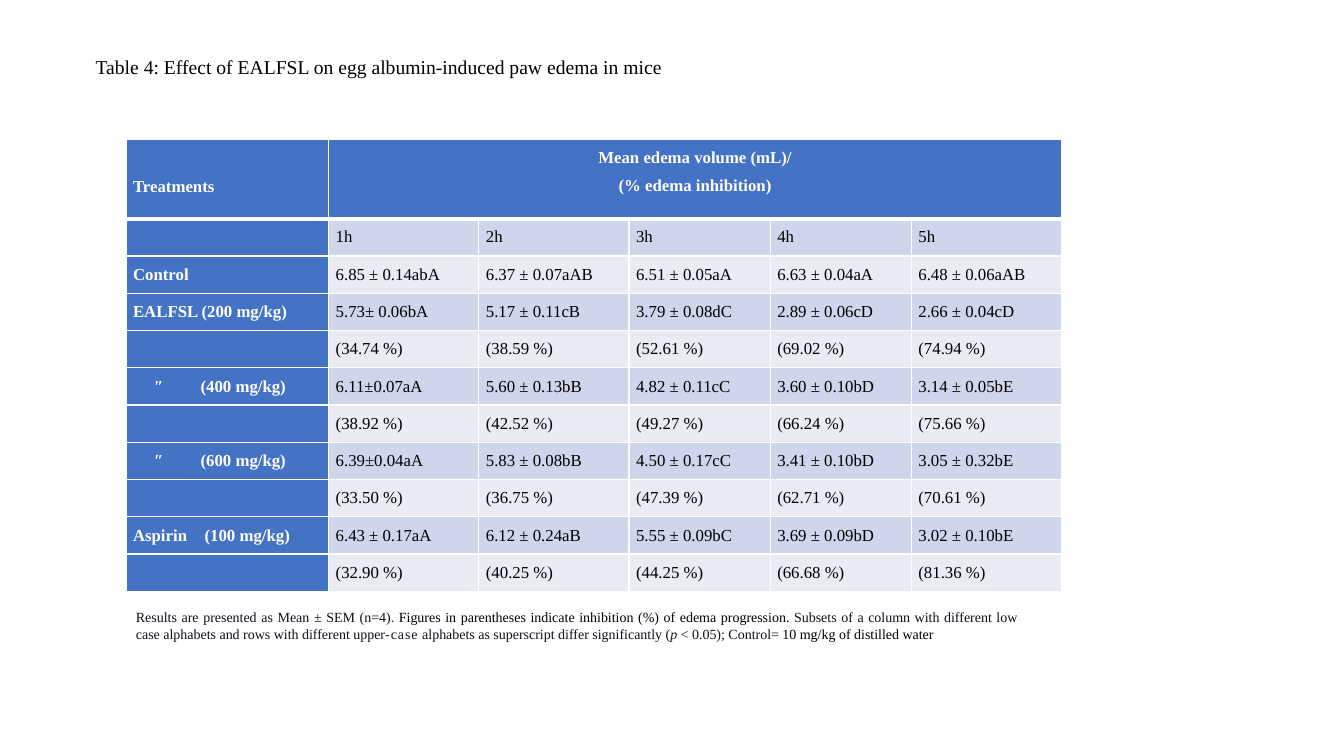
from dataclasses import dataclass

from lxml.etree import SubElement
from pptx import Presentation
from pptx.dml.color import RGBColor
from pptx.enum.text import MSO_ANCHOR, PP_ALIGN
from pptx.oxml.ns import qn
from pptx.util import Inches, Pt


@dataclass(frozen=True)
class Theme:
    font: str = "Times New Roman"
    title_size: int = 14
    table_size: int = 12
    note_size: int = 10
    black: str = "000000"
    ink: str = "0E101A"
    white: str = "FFFFFF"
    header: str = "4472C4"
    bands: tuple = ("CFD5EA", "E9EBF5")
    rule: int = 1
    heavy_rule: int = 3


THEME = Theme()
TITLE = "Table 4: Effect of EALFSL on egg albumin-induced paw edema in mice"
HEADING = ("Mean edema volume (mL)/", "(% edema inhibition)")
ROWS = [
    ("", "1h", "2h", "3h", "4h", "5h"),
    ("Control", "6.85 ± 0.14abA", "6.37 ± 0.07aAB", "6.51 ± 0.05aA", "6.63 ± 0.04aA", "6.48 ± 0.06aAB"),
    ("EALFSL (200 mg/kg)", "5.73± 0.06bA", "5.17 ± 0.11cB", "3.79 ± 0.08dC", "2.89 ± 0.06cD", "2.66 ± 0.04cD"),
    ("", "(34.74 %)", "(38.59 %)", "(52.61 %)", "(69.02 %)", "(74.94 %)"),
    ("\tʺ\t(400 mg/kg)", "6.11±0.07aA", "5.60 ± 0.13bB", "4.82 ± 0.11cC", "3.60 ± 0.10bD", "3.14 ± 0.05bE"),
    ("", "(38.92 %)", "(42.52 %)", "(49.27 %)", "(66.24 %)", "(75.66 %)"),
    ("\tʺ\t(600 mg/kg)", "6.39±0.04aA", "5.83 ± 0.08bB", "4.50 ± 0.17cC", "3.41 ± 0.10bD", "3.05 ± 0.32bE"),
    ("", "(33.50 %)", "(36.75 %)", "(47.39 %)", "(62.71 %)", "(70.61 %)"),
    ("Aspirin\t(100 mg/kg)", "6.43 ± 0.17aA", "6.12 ± 0.24aB", "5.55 ± 0.09bC", "3.69 ± 0.09bD", "3.02 ± 0.10bE"),
    ("", "(32.90 %)", "(40.25 %)", "(44.25 %)", "(66.68 %)", "(81.36 %)"),
]
NOTE = [
    ("Results are presented as Mean ± SEM (n=4). ", THEME.ink, {}),
    ("Figures in parentheses indicate inhibition (%) of edema progression. ", THEME.black, {}),
    ("Subsets of a column with different low case alphabets and rows with different upper", THEME.ink, {}),
    ("-case", THEME.ink, {"spacing": 70}),
    (" alphabets as superscript differ significantly (", THEME.ink, {}),
    ("p ", THEME.ink, {"italic": True}),
    ("< 0.05); Control= ", THEME.ink, {}),
    ("10 mg/kg of distilled water", THEME.black, {}),
]


def set_attributes(target, values):
    for name, value in values.items():
        setattr(target, name, value)


def add_run(paragraph, text, size, color, bold=False, italic=False, spacing=0):
    run = paragraph.add_run()
    run.text = text
    set_attributes(run.font, {"name": THEME.font, "size": Pt(size), "bold": bold, "italic": italic})
    run.font.color.rgb = RGBColor.from_string(color)
    if spacing:
        run.font._element.set("spc", str(spacing))


def add_text_box(slide, box, right_margin=0.1):
    frame = slide.shapes.add_textbox(*map(Inches, box)).text_frame
    set_attributes(frame, {"word_wrap": True, "margin_right": Inches(right_margin)})
    return frame.paragraphs[0]


def add_title(slide, box):
    add_run(add_text_box(slide, box), TITLE, THEME.title_size, THEME.black)


def add_note(slide, box):
    paragraph = add_text_box(slide, box, right_margin=0.31)
    paragraph.alignment = PP_ALIGN.JUSTIFY
    for text, color, values in NOTE:
        add_run(paragraph, text, THEME.note_size, color, **values)


def add_tab_stops(paragraph, positions):
    tab_list = SubElement(paragraph._p.get_or_add_pPr(), qn("a:tabLst"))
    for position in positions:
        SubElement(tab_list, qn("a:tab"), pos=str(Inches(position)), algn="l")


def set_borders(cell, bottom):
    properties = cell._tc.get_or_add_tcPr()
    for side, width in (("L", THEME.rule), ("R", THEME.rule), ("T", THEME.rule), ("B", bottom)):
        line = SubElement(properties, qn(f"a:ln{side}"), w=str(Pt(width)))
        fill = SubElement(line, qn("a:solidFill"))
        SubElement(fill, qn("a:srgbClr"), val=THEME.white)


def format_cell(cell, lines, fill, color, bold=False, bottom=THEME.rule, alignment=PP_ALIGN.LEFT):
    set_borders(cell, bottom)
    cell.fill.solid()
    cell.fill.fore_color.rgb = RGBColor.from_string(fill)
    set_attributes(cell, {
        "margin_left": Inches(0.07), "margin_right": Inches(0.07),
        "margin_top": 0, "margin_bottom": 0, "vertical_anchor": MSO_ANCHOR.TOP,
    })
    for index, text in enumerate(lines):
        frame = cell.text_frame
        paragraph = frame.add_paragraph() if index else frame.paragraphs[0]
        if text:
            set_attributes(paragraph, {"line_spacing": 1.5, "alignment": alignment})
            if "\t" in text:
                add_tab_stops(paragraph, (0.21, 0.67) if text.startswith("\t") else (0.71,))
            add_run(paragraph, text, THEME.table_size, color, bold)


def add_edema_table(slide, box):
    widths = (2.01, 1.49, 1.49, 1.4, 1.4, 1.49)
    heights = (0.79,) + (0.37,) * len(ROWS)
    table = slide.shapes.add_table(len(heights), len(widths), *map(Inches, box)).table
    set_attributes(table, {"first_row": False, "horz_banding": False})
    for column, width in zip(table.columns, widths):
        column.width = Inches(width)
    for row, height in zip(table.rows, heights):
        row.height = Inches(height)

    header_style = {"fill": THEME.header, "color": THEME.white, "bold": True}
    for column in range(len(widths)):
        lines = (("Treatments",), HEADING)[column] if column < 2 else ()
        alignment = PP_ALIGN.CENTER if column else PP_ALIGN.LEFT
        format_cell(table.cell(0, column), lines, bottom=THEME.heavy_rule, alignment=alignment, **header_style)
    table.cell(0, 0).margin_top = Inches(0.29)
    table.cell(0, 1).merge(table.cell(0, len(widths) - 1))

    for row_index, row in enumerate(ROWS):
        value_style = {"fill": THEME.bands[row_index % 2], "color": THEME.black}
        for column, text in enumerate(row):
            style = value_style if column else header_style
            format_cell(table.cell(row_index + 1, column), (text,), **style)


def add_table_slide(presentation):
    slide = presentation.slides.add_slide(presentation.slide_layouts[6])
    add_title(slide, (0.85, 0.5, 8.9, 0.34))
    add_edema_table(slide, (1.25, 1.38, 9.28, 4.49))
    add_note(slide, (1.25, 5.99, 9.15, 0.44))


def main():
    presentation = Presentation()
    set_attributes(presentation, {"slide_width": Inches(13.33), "slide_height": Inches(7.5)})
    add_table_slide(presentation)
    presentation.save("out.pptx")


if __name__ == "__main__":
    main()
